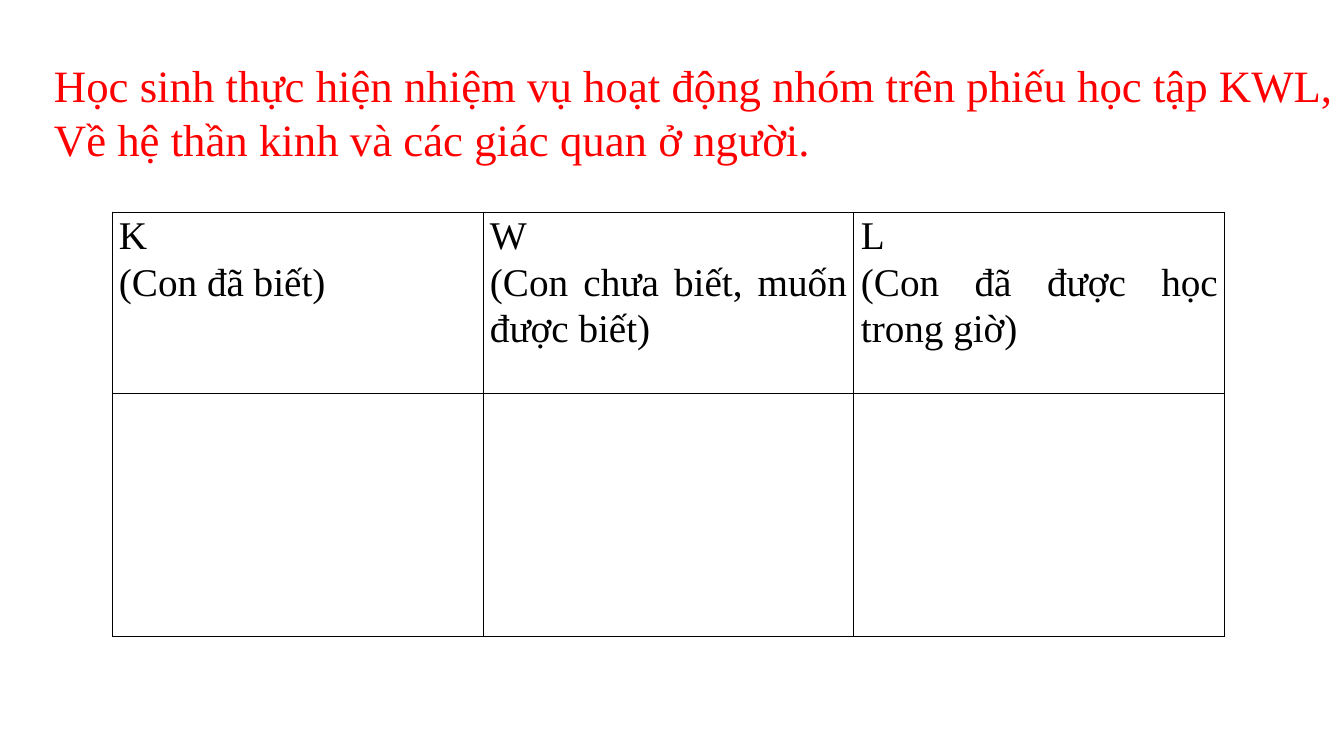
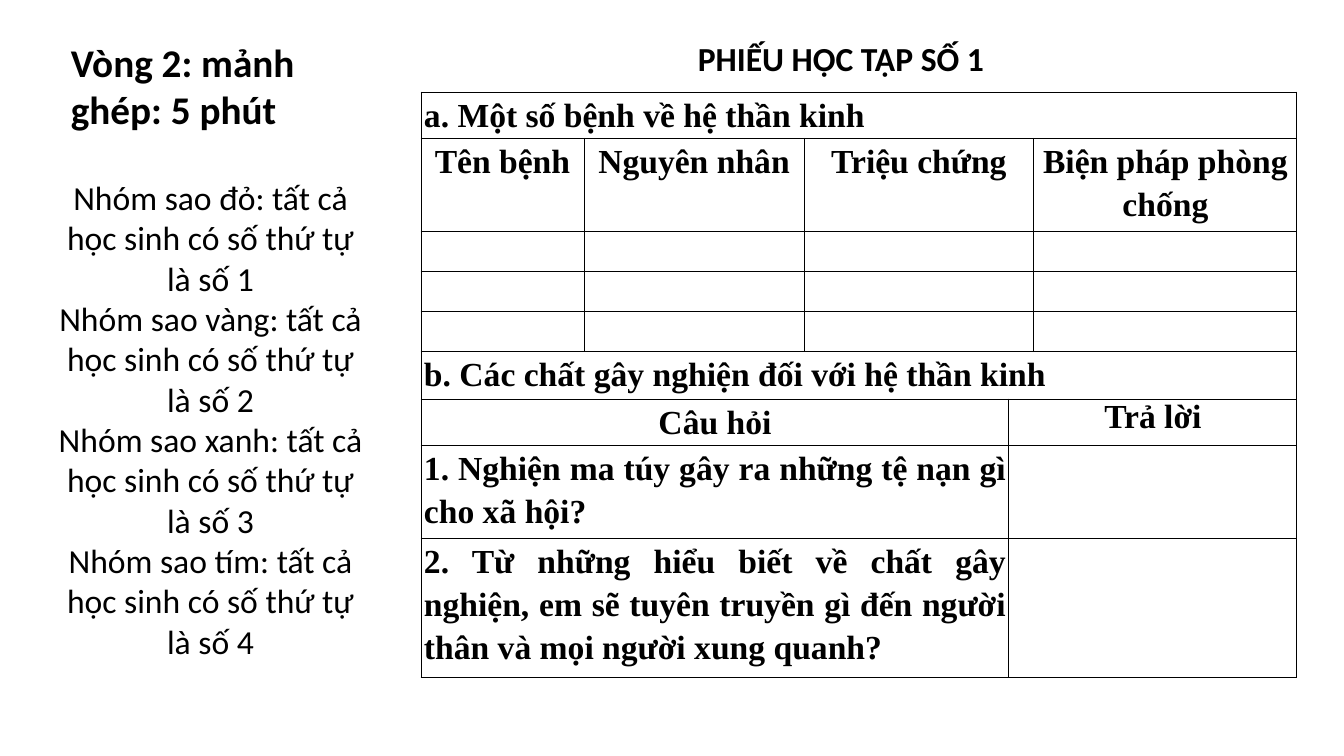
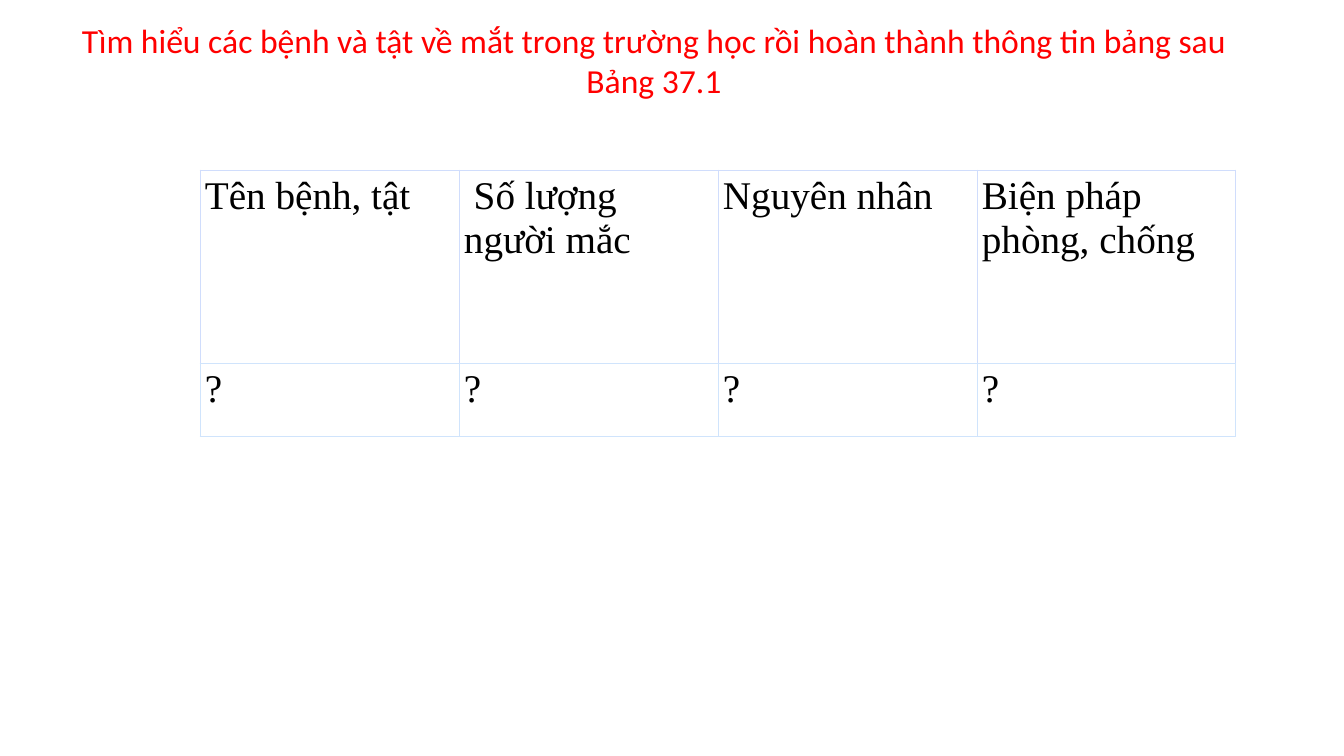
import pptx
import pptx.dml.color
import pptx.enum.text
import pptx.oxml
import pptx.oxml.ns
import pptx.util

PX = 914400 / 100.8
SERIF = "Times New Roman"
SANS = "Calibri"
BLACK = pptx.dml.color.RGBColor(0x00, 0x00, 0x00)
WHITE = pptx.dml.color.RGBColor(0xFF, 0xFF, 0xFF)
RED = pptx.dml.color.RGBColor(0xFF, 0x00, 0x00)
LAVENDER = pptx.dml.color.RGBColor(0xD0, 0xDD, 0xFC)
SKY = pptx.dml.color.RGBColor(0xD0, 0xE4, 0xFC)
BORDER_WIDTH = pptx.util.Pt(0.75)
ALIGN = pptx.enum.text.PP_ALIGN


def write(frame, lines, size=24, font=SANS, color=BLACK, bold=False,
          align=ALIGN.LEFT, spacing=None, after=None):
    """Put one paragraph per line in a text frame."""
    for index, line in enumerate(lines):
        para = frame.add_paragraph() if index else frame.paragraphs[0]
        para.alignment = align
        para.line_spacing = spacing
        if after:
            para.space_after = pptx.util.Pt(after)
        span = para.add_run()
        span.text = line
        span.font.name = font
        span.font.size = pptx.util.Pt(size)
        span.font.bold = bold
        span.font.color.rgb = color


def add_grid(page, left, top, widths, heights, row_borders, side_margin, end_margin):
    """Add a white table; row_borders gives each row its left, right, top and bottom colours."""
    place = [round(value * PX) for value in (left, top, sum(widths), sum(heights))]
    table = page.shapes.add_table(len(heights), len(widths), *place).table
    table.first_row = table.horz_banding = False
    for column, width in zip(table.columns, widths):
        column.width = round(width * PX)
    for row, height, borders in zip(table.rows, heights, row_borders):
        row.height = round(height * PX)
        for cell in row.cells:
            cell.margin_left = cell.margin_right = round(side_margin * PX)
            cell.margin_top = cell.margin_bottom = round(end_margin * PX)
            properties = cell._tc.get_or_add_tcPr()
            for side, color in zip("LRTB", borders):
                properties.append(pptx.oxml.parse_xml(
                    f'<a:ln{side} {pptx.oxml.ns.nsdecls("a")} w="{BORDER_WIDTH}"><a:solidFill>'
                    f'<a:srgbClr val="{color}"/></a:solidFill></a:ln{side}>'))
            cell.fill.solid()
            cell.fill.fore_color.rgb = WHITE
    return table


deck = pptx.Presentation()
deck.slide_width = round(1344 * PX)
deck.slide_height = round(756 * PX)
kwl_page, worksheet_page, eye_page = (
    deck.slides.add_slide(deck.slide_layouts[6]) for number in range(3))

# Text boxes: page, left, top, width, height, wrap, lines, format
text_boxes = [
    (kwl_page, 44, 53, 1311, 119, False,
     ["Học sinh thực hiện nhiệm vụ hoạt động nhóm trên phiếu học tập KWL,",
      "Về hệ thần kinh và các giác quan ở người."],
     dict(size=32, font=SERIF, color=RED)),
    (worksheet_page, 61, 33, 331, 105, True, ["Vòng 2: mảnh ghép: 5 phút"],
     dict(size=28, bold=True)),
    (worksheet_page, 47, 172, 327, 539, True,
     [f"Nhóm sao {star}: tất cả học sinh có số thứ tự là số {number}"
      for number, star in enumerate(["đỏ", "vàng", "xanh", "tím"], 1)],
     dict(align=ALIGN.CENTER)),
    (worksheet_page, 453, 33, 776, 50, True, ["PHIẾU HỌC TẬP SỐ 1"],
     dict(bold=True, align=ALIGN.CENTER)),
    (eye_page, -16, 15, 1340, 92, True,
     ["Tìm hiểu các bệnh và tật về mắt trong trường học rồi hoàn thành thông tin bảng sau",
      "Bảng 37.1"],
     dict(color=RED, align=ALIGN.CENTER)),
]
for page, left, top, width, height, wrap, lines, style in text_boxes:
    box = page.shapes.add_textbox(*(round(value * PX) for value in (left, top, width, height)))
    box.text_frame.word_wrap = wrap
    box.text_frame.auto_size = pptx.enum.text.MSO_AUTO_SIZE.SHAPE_TO_FIT_TEXT
    write(box.text_frame, lines, **style)

# KWL table
kwl_table = add_grid(kwl_page, 112, 212, [371] * 3, [181, 244], [[BLACK] * 4] * 2, 7, 0)
kwl_headings = [("K", "(Con đã biết)"),
                ("W", "(Con chưa biết, muốn được biết)"),
                ("L", "(Con đã được học trong giờ)")]
for column, lines in enumerate(kwl_headings):
    write(kwl_table.cell(0, column).text_frame, lines, size=28, font=SERIF,
          align=ALIGN.JUSTIFY, spacing=1.07)

# Worksheet table
worksheet_heights = [46, 92, 40, 40, 40, 48, 46, 93, 139]
worksheet = add_grid(worksheet_page, 421, 92, [163, 220, 205, 25, 263], worksheet_heights,
                     [[BLACK] * 4] * len(worksheet_heights), 3, 0)
merges = [(0, 0, 4), (5, 0, 4)]
merges += [(row, 2, 3) for row in range(1, 5)]
merges += [(row, first, last) for row in range(6, 9) for first, last in [(0, 2), (3, 4)]]
for row, first, last in merges:
    worksheet.cell(row, first).merge(worksheet.cell(row, last))

worksheet_texts = [
    (0, 0, "a. Một số bệnh về hệ thần kinh", ALIGN.JUSTIFY),
    (1, 0, "Tên bệnh", ALIGN.CENTER),
    (1, 1, "Nguyên nhân", ALIGN.CENTER),
    (1, 2, "Triệu chứng", ALIGN.CENTER),
    (1, 4, "Biện pháp phòng chống", ALIGN.CENTER),
    (5, 0, "b. Các chất gây nghiện đối với hệ thần kinh", ALIGN.JUSTIFY),
    (6, 0, "Câu hỏi", ALIGN.CENTER),
    (6, 3, "Trả lời", ALIGN.CENTER),
    (7, 0, "1. Nghiện ma túy gây ra những tệ nạn gì cho xã hội?", ALIGN.JUSTIFY),
    (8, 0, "2. Từ những hiểu biết về chất gây nghiện, em sẽ tuyên truyền gì "
           "đến người thân và mọi người xung quanh?", ALIGN.JUSTIFY),
]
for row, column, text, align in worksheet_texts:
    spread = {} if text == "Trả lời" else dict(spacing=1.15, after=3)
    write(worksheet.cell(row, column).text_frame, [text], font=SERIF, bold=True,
          align=align, **spread)

# Eye disease table
eye_headings = ["Tên bệnh, tật", " Số lượng người mắc", "Nguyên nhân", "Biện pháp phòng, chống"]
eye_table = add_grid(eye_page, 200, 170, [259] * 4, [193, 73],
                     [[LAVENDER] * 3 + [SKY], [SKY] * 4], 5, 5)
for column, heading in enumerate(eye_headings):
    for row, text in enumerate([heading, "?"]):
        write(eye_table.cell(row, column).text_frame, [text], size=28, font=SERIF)

deck.save("out.pptx")
